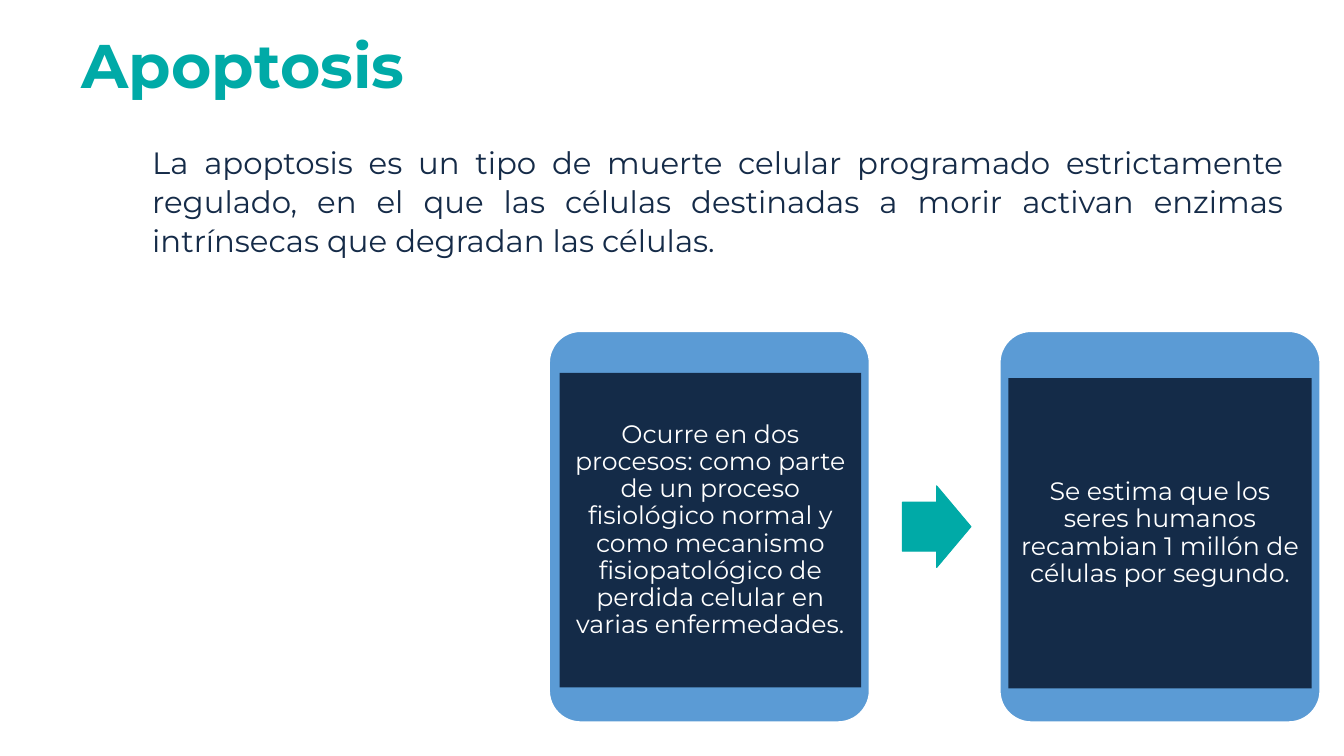
"""Build the Apoptosis slide: title, definition and two linked cards."""
from pptx import Presentation
from pptx.dml.color import RGBColor
from pptx.enum import shapes, text
from pptx.util import Inches, Pt

FONT = "Montserrat"
TEAL, NAVY, CARD_NAVY, BLUE, WHITE = "00AAA7", "152B48", "142B48", "5B9BD5", "FFFFFF"
TITLE = "Apoptosis"
DEFINITION = (
    "La apoptosis es un tipo de muerte celular programado estrictamente regulado, "
    "en el que las células destinadas a morir activan enzimas intrínsecas que "
    "degradan las células."
)
CARDS = [
    ("Ocurre en dos procesos: como parte de un proceso fisiológico normal y como "
     "mecanismo fisiopatológico de perdida celular en varias enfermedades.",
     (5.55, 3.7, 2.99, 3.12)),
    ("Se estima que los seres humanos recambian 1 millón de células por segundo.",
     (10, 3.75, 3.01, 3.08)),
]
FRAME_LEFT, FRAME_TOP, FRAME_WIDTH, FRAME_HEIGHT = 5.44, 3.28, 3.19, 3.89
FRAME_STEP = 4.47
ARROW = (8.95, 4.82, 0.68, 0.81)


def color(value):
    return RGBColor.from_string(value)


def add_block(slide, kind, area, fill, line=None, line_width=0, adjustments=()):
    block = slide.shapes.add_shape(kind, *map(Inches, area))
    block.shadow.inherit = False
    block.fill.solid()
    block.fill.fore_color.rgb = color(fill)
    if line:
        block.line.color.rgb = color(line)
        block.line.width = Pt(line_width)
    else:
        block.line.fill.background()
    for index, value in enumerate(adjustments):
        block.adjustments[index] = value
    return block


def write(box, words, size, ink, align, anchor, margins, spacing=1.0, bold=False):
    frame = box.text_frame
    frame.word_wrap = True
    frame.vertical_anchor = anchor
    (frame.margin_left, frame.margin_top,
     frame.margin_right, frame.margin_bottom) = map(Inches, margins)
    para = frame.paragraphs[0]
    para.alignment = align
    para.line_spacing = spacing
    span = para.add_run()
    span.text = words
    span.font.name = FONT
    span.font.size = Pt(size)
    span.font.bold = bold
    span.font.color.rgb = color(ink)


def main():
    deck = Presentation()
    deck.slide_width, deck.slide_height = Inches(13.33), Inches(7.5)
    slide = deck.slides.add_slide(deck.slide_layouts[6])
    align, anchor = text.PP_ALIGN, text.MSO_ANCHOR
    preset = shapes.MSO_SHAPE

    title = slide.shapes.add_textbox(*map(Inches, (0.68, 0.14, 12.42, 1.17)))
    write(title, TITLE, 44, TEAL, align.LEFT, anchor.TOP, [0.13] * 4, bold=True)

    body = slide.shapes.add_textbox(*map(Inches, (1.21, 0.89, 11.65, 2.58)))
    write(body, DEFINITION, 22, NAVY, align.JUSTIFY, anchor.TOP,
          (0.3, 0.52, 0.13, 0.13), 1.05)

    for index, (words, area) in enumerate(CARDS):
        left = FRAME_LEFT + index * FRAME_STEP
        add_block(slide, preset.ROUNDED_RECTANGLE,
                  (left, FRAME_TOP, FRAME_WIDTH, FRAME_HEIGHT),
                  BLUE, WHITE, 2, [0.1])
        card = add_block(slide, preset.RECTANGLE, area, CARD_NAVY)
        write(card, words, 18, WHITE, align.CENTER, anchor.MIDDLE, [0.08] * 4, 0.9)

    add_block(slide, preset.RIGHT_ARROW, ARROW, TEAL, TEAL, 0.75, [0.6, 0.5])
    deck.save("out.pptx")


if __name__ == "__main__":
    main()
